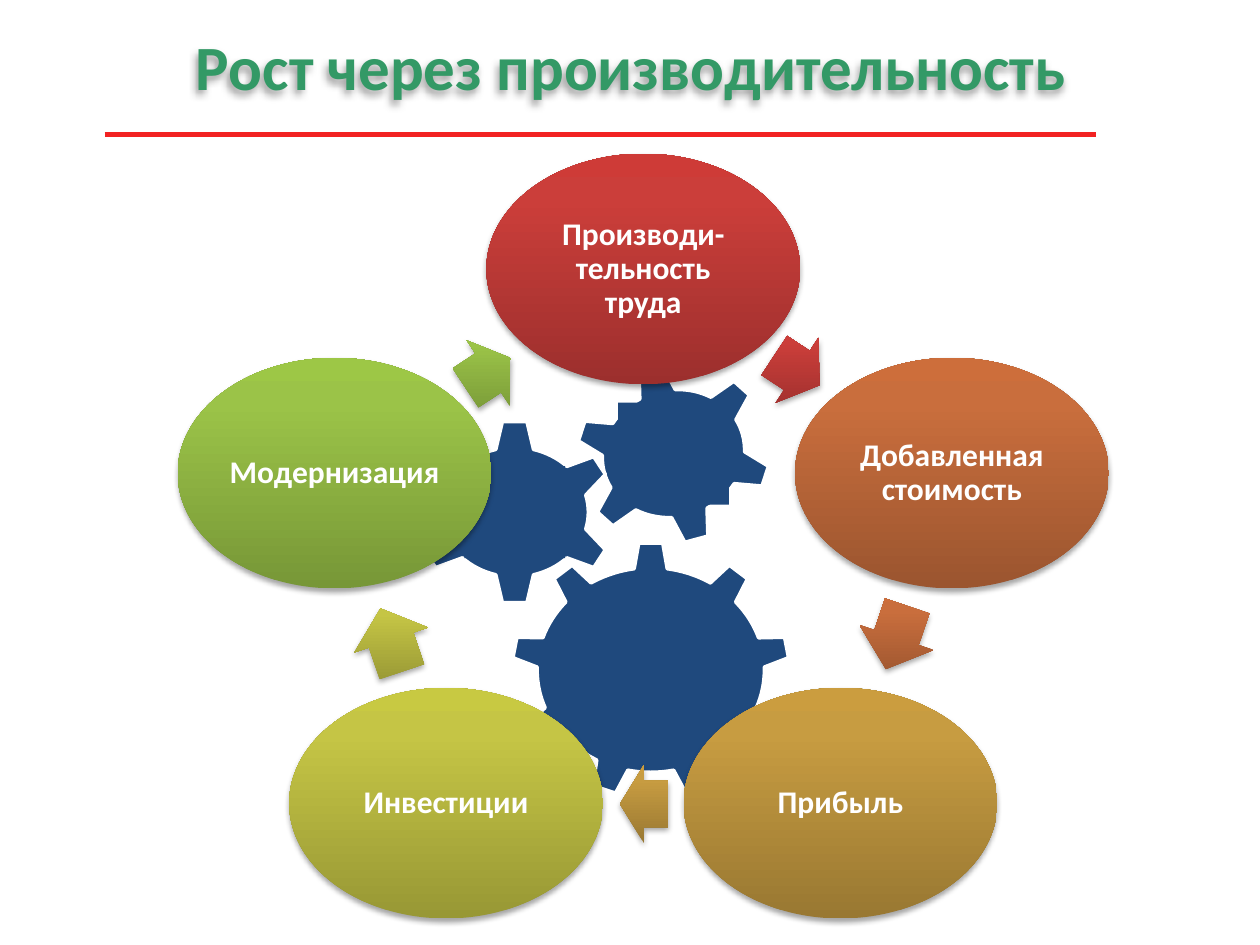
"""Build the slide showing growth through productivity as a cycle around gears."""
from dataclasses import dataclass

from lxml import etree
from pptx import Presentation
from pptx.dml.color import RGBColor
from pptx.enum.shapes import MSO_CONNECTOR, MSO_SHAPE
from pptx.enum.text import MSO_ANCHOR, PP_ALIGN
from pptx.oxml import parse_xml
from pptx.oxml.ns import nsdecls, qn
from pptx.util import Inches, Pt

ELLIPSE = MSO_SHAPE.OVAL
ARROW = MSO_SHAPE.RIGHT_ARROW
RECTANGLE = MSO_SHAPE.RECTANGLE
GEAR_6 = MSO_SHAPE.GEAR_6
GEAR_9 = MSO_SHAPE.GEAR_9
STRAIGHT = MSO_CONNECTOR.STRAIGHT
CENTER = PP_ALIGN.CENTER
MIDDLE = MSO_ANCHOR.MIDDLE

WIDTH, HEIGHT = Inches(10), Inches(7.5)


@dataclass(frozen=True)
class Theme:
    """Colours and type sizes of the slide."""
    font: str = "Calibri"
    title_size: float = 36
    stage_size: float = 18
    title: str = "339966"
    rule: str = "F22222"
    gear: str = "1F497D"
    white: str = "FFFFFF"
    red: tuple = ("9C2F2D", "CB3E3A", "CE3B37")
    orange: tuple = ("9B552F", "C96E3D", "CD6E3B")
    gold: tuple = ("997832", "C79C41", "CB9D3F")
    olive: tuple = ("989835", "C5C545", "C8C942")
    green: tuple = ("779737", "9BC348", "9DC746")


THEME = Theme()
STAGE_SIZE = (24.9, 24.4)
ARROW_HEIGHT = 8.27
STOPS = (0, 80, 100)

GEARS = [
    (GEAR_6, (53.45, 48), (15.7, 19.2), (8.8, 10.8), 345),
    (GEAR_6, (40.85, 54.2), (16.1, 19.6), (8, 9.73), 0),
    (GEAR_9, (51.65, 70.9), (22.1, 27.07), (13.2, 13.87), 0),
]

STAGES = [
    ("Производи-тельность труда", (51.05, 28.47), THEME.red, (63.25, 39.2), 4.3, 33.4),
    ("Добавленная стоимость", (75.55, 50.07), THEME.orange, (71.15, 67.47), 5.3, 108.7),
    ("Прибыль", (66.7, 85), THEME.gold, (51.1, 85.07), 3.8, 180),
    ("Инвестиции", (35.4, 85), THEME.olive, (31.05, 67.73), 5.3, 251.3),
    ("Модернизация", (26.55, 50.07), THEME.green, (38.75, 39.47), 4.3, 326.6),
]


def col(share):
    """Turn a percentage of the slide width into a length."""
    return round(WIDTH * share / 100)


def row(share):
    """Turn a percentage of the slide height into a length."""
    return round(HEIGHT * share / 100)


def centred_box(center, size):
    """Return left, top, width and height of a box around a centre."""
    (x, y), (width, height) = center, size
    return col(x - width / 2), row(y - height / 2), col(width), row(height)


def add_soft_shadow(shape, blur, distance, angle, alpha):
    """Give a shape a blurred black shadow; the angle is clockwise."""
    properties = shape._element.spPr
    for old in properties.findall(qn("a:effectLst")):
        properties.remove(old)
    properties.append(parse_xml(
        f'<a:effectLst {nsdecls("a")}><a:outerShdw blurRad="{Pt(blur)}" '
        f'dist="{Pt(distance)}" dir="{angle * 60000}" rotWithShape="0">'
        f'<a:srgbClr val="000000"><a:alpha val="{alpha * 1000}"/></a:srgbClr>'
        '</a:outerShdw></a:effectLst>'))


def fill_upward(shape, colours):
    """Fill a shape with a gradient from bottom to top that ignores rotation."""
    shape.fill.gradient()
    gradient = shape._element.spPr.find(qn("a:gradFill"))
    stops = "".join(f'<a:gs pos="{stop * 1000}"><a:srgbClr val="{colour}"/></a:gs>'
                    for stop, colour in zip(STOPS, colours))
    gradient.getparent().replace(gradient, parse_xml(
        f'<a:gradFill {nsdecls("a")} rotWithShape="0"><a:gsLst>{stops}</a:gsLst>'
        '<a:lin ang="16200000" scaled="0"/></a:gradFill>'))


def write_text(shape, text, size, colour):
    """Write bold centred text into a shape."""
    frame = shape.text_frame
    frame.word_wrap = True
    frame.vertical_anchor = MIDDLE
    frame.text = text
    paragraph = frame.paragraphs[0]
    paragraph.alignment = CENTER
    font = paragraph.runs[0].font
    font.name, font.size, font.bold = THEME.font, Pt(size), True
    font.color.rgb = RGBColor.from_string(colour)
    return frame


def add_title(slide, text):
    """Add the shadowed title and the rule under it."""
    rule = slide.shapes.add_connector(STRAIGHT, col(8.3), row(14.27), col(87), row(14.27))
    rule.line.color.rgb = RGBColor.from_string(THEME.rule)
    rule.line.width = Pt(2.75)
    etree.SubElement(rule._element.spPr, qn("a:effectLst"))
    title = slide.shapes.add_textbox(*centred_box((50.1, 6.87), (90, 16.67)))
    write_text(title, text, THEME.title_size, THEME.title)
    add_soft_shadow(title, 4, 3, 135, 40)


def add_gear(slide, kind, center, size, hub_size, rotation):
    """Add a gear with its square hub."""
    gear = slide.shapes.add_shape(kind, *centred_box(center, size))
    gear.rotation = rotation
    gear.line.color.rgb = RGBColor.from_string(THEME.white)
    gear.line.width = Pt(2)
    hub = slide.shapes.add_shape(RECTANGLE, *centred_box(center, hub_size))
    hub.line.fill.background()
    for part in (gear, hub):
        part.shadow.inherit = False
        part.fill.solid()
        part.fill.fore_color.rgb = RGBColor.from_string(THEME.gear)


def add_glossy(slide, kind, center, size, colours):
    """Add an unlined shape with a gradient and a shadow."""
    shape = slide.shapes.add_shape(kind, *centred_box(center, size))
    shape.line.fill.background()
    fill_upward(shape, colours)
    add_soft_shadow(shape, 3.15, 1.8, 90, 35)
    return shape


def add_stage(slide, label, center, colours, arrow_center, arrow_length, rotation):
    """Add a stage of the cycle and the arrow to the next one."""
    stage = add_glossy(slide, ELLIPSE, center, STAGE_SIZE, colours)
    frame = write_text(stage, label, THEME.stage_size, THEME.white)
    frame.margin_left = frame.margin_right = Inches(0.03)
    frame.margin_top = frame.margin_bottom = Inches(0.03)
    frame.paragraphs[0].line_spacing = 0.9
    arrow = add_glossy(slide, ARROW, arrow_center, (arrow_length, ARROW_HEIGHT), colours)
    arrow.adjustments[0], arrow.adjustments[1] = 0.6, 0.5
    arrow.rotation = rotation


def main():
    """Build and save the slide."""
    deck = Presentation()
    deck.slide_width, deck.slide_height = WIDTH, HEIGHT
    slide = deck.slides.add_slide(deck.slide_layouts[6])
    add_title(slide, "Рост через производительность")
    for gear in GEARS:
        add_gear(slide, *gear)
    for stage in STAGES:
        add_stage(slide, *stage)
    deck.save("out.pptx")


if __name__ == "__main__":
    main()
